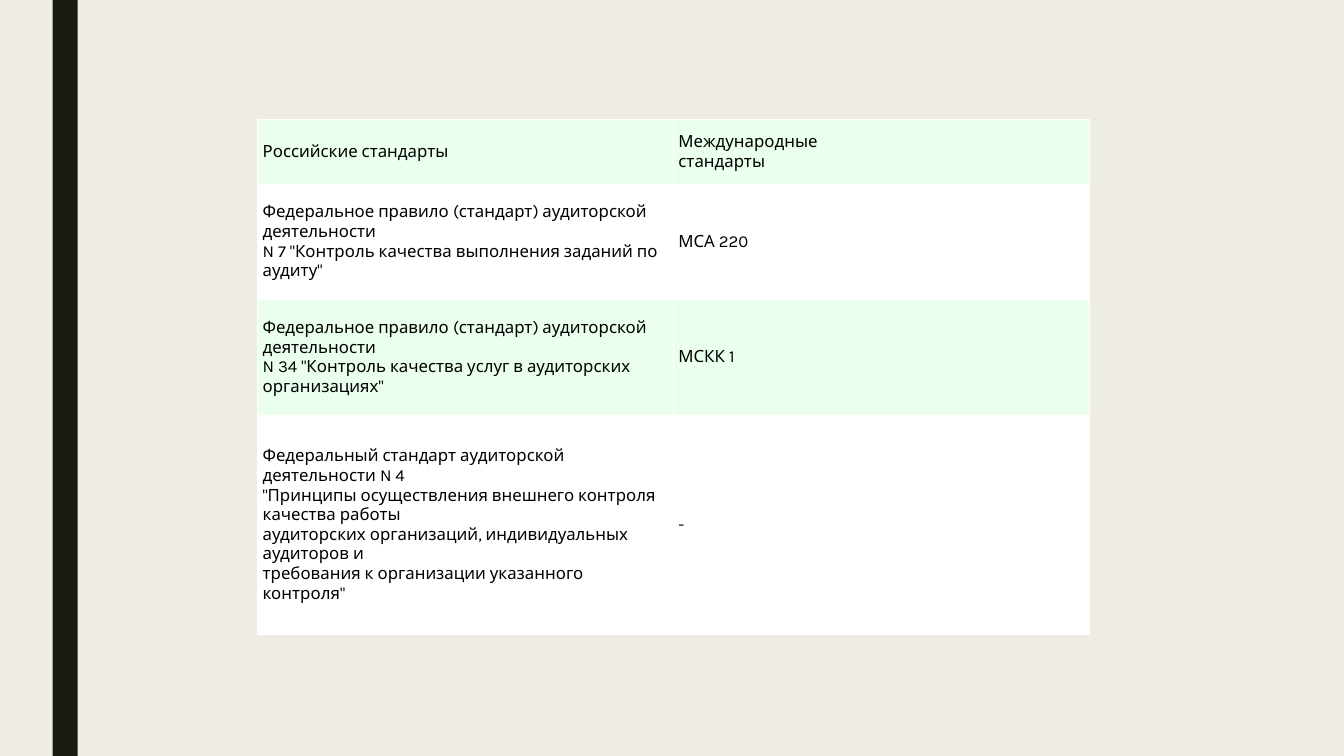
from copy import deepcopy

from lxml.etree import SubElement
from pptx import Presentation
from pptx.dml.color import RGBColor
from pptx.enum.shapes import MSO_SHAPE
from pptx.enum.text import MSO_ANCHOR
from pptx.oxml.ns import qn
from pptx.util import Pt

ROWS = [
    ("Российские стандарты", "Международные \vстандарты"),
    ("Федеральное правило (стандарт) аудиторской деятельности \v"
     "N 7 \"Контроль качества выполнения заданий по аудиту\"", "МСА 220"),
    ("Федеральное правило (стандарт) аудиторской деятельности \v"
     "N 34 \"Контроль качества услуг в аудиторских организациях\"", "МСКК 1"),
    ("Федеральный стандарт аудиторской деятельности N 4 \v"
     "\"Принципы осуществления внешнего контроля качества работы\v"
     "аудиторских организаций, индивидуальных аудиторов и \v"
     "требования к организации указанного контроля\"", "-"),
]
ROW_HEIGHTS = [46, 82.5, 82.5, 157]
COL_WIDTH = 297
BAND_FILLS = ["EAFFED", "FFFFFF"]


def paint(fill, color):
    fill.solid()
    fill.fore_color.rgb = RGBColor.from_string(color)


def write(tf, text, font="Karla", size=12, color="000000"):
    """Fill the first paragraph; line breaks get the same format as the runs."""
    p = tf.paragraphs[0]
    p.text = text
    for r in p.runs:
        r.font.name = font
        r.font.size = Pt(size)
        paint(r.font.fill, color)
    for br in p._p.findall(qn("a:br")):
        br.append(deepcopy(p.runs[0]._r.rPr))


prs = Presentation()
prs.slide_width, prs.slide_height = Pt(960), Pt(540)
slide = prs.slides.add_slide(prs.slide_layouts[6])
paint(slide.background.fill, "EFEDE3")

bar = slide.shapes.add_shape(MSO_SHAPE.RECTANGLE, Pt(37.5), Pt(0), Pt(18), Pt(540))
bar.shadow.inherit = False
paint(bar.fill, "191B0E")
bar.line.fill.background()

table = slide.shapes.add_table(len(ROWS), 2, Pt(184), Pt(85.5),
                               Pt(2 * COL_WIDTH), Pt(sum(ROW_HEIGHTS))).table
table.first_row = table.horz_banding = False
for col in table.columns:
    col.width = Pt(COL_WIDTH)

for i, (texts, height) in enumerate(zip(ROWS, ROW_HEIGHTS)):
    table.rows[i].height = Pt(height)
    for j, text in enumerate(texts):
        cell = table.cell(i, j)
        write(cell.text_frame, text)
        cell.vertical_anchor = MSO_ANCHOR.MIDDLE
        cell.margin_left = cell.margin_right = Pt(3.6)
        cell.margin_top = cell.margin_bottom = Pt(3.6)
        tcPr = cell._tc.get_or_add_tcPr()
        for side in ("a:lnL", "a:lnR", "a:lnT", "a:lnB"):
            ln = SubElement(tcPr, qn(side), w=str(Pt(0.75)))
            SubElement(SubElement(ln, qn("a:solidFill")), qn("a:srgbClr"), val="FFFFFF")
        paint(cell.fill, BAND_FILLS[i % 2])

prs.save("out.pptx")
